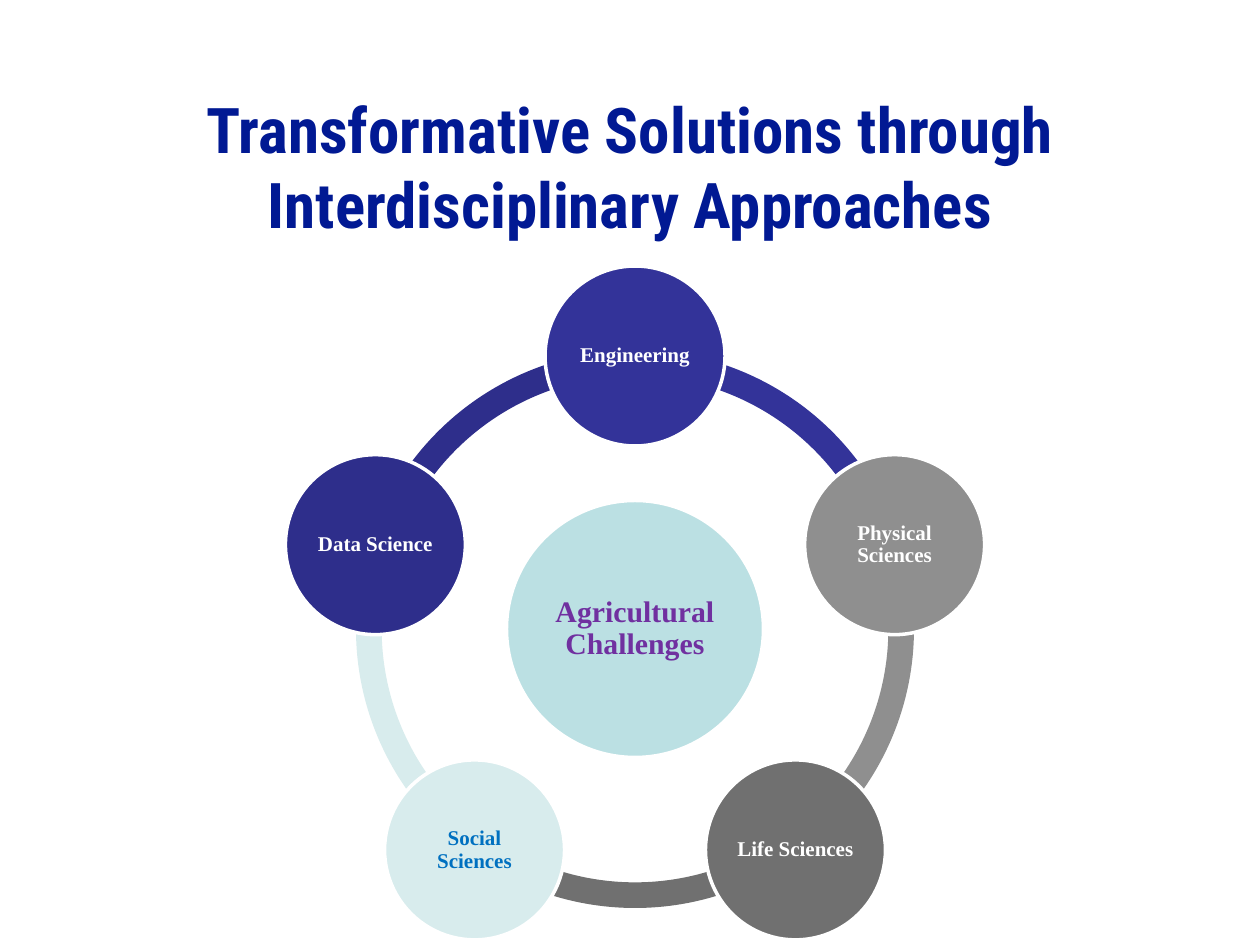
from math import cos, radians, sin

from pptx import Presentation
from pptx.dml.color import RGBColor
from pptx.enum.shapes import MSO_SHAPE
from pptx.enum.text import MSO_ANCHOR, MSO_AUTO_SIZE, PP_ALIGN
from pptx.util import Pt

# Content
TITLE = "Transformative Solutions through Interdisciplinary Approaches"
HUB = ("Agricultural Challenges", "hub", "hub_text")
NODES = [  # label, fill, text colour; clockwise from the top
    ("Engineering", "indigo", "white"),
    ("Physical Sciences", "silver", "white"),
    ("Life Sciences", "gray", "white"),
    ("Social Sciences", "mist", "blue"),
    ("Data Science", "navy", "white"),
]

THEME = {
    "colors": {
        "title": "011993", "white": "FFFFFF", "blue": "0070C0",
        "hub": "BBE0E3", "hub_text": "7030A0", "indigo": "333399",
        "silver": "8F8F8F", "gray": "707070", "mist": "D8ECED", "navy": "2E2E8B",
    },
    "sizes": {"title": 36, "hub": 17, "node": 12},
    "fonts": {"title": "Roboto Condensed", "body": "Times New Roman"},
}

# Geometry in px
PX = 914400 / 126
CENTER_X, CENTER_Y = 635, 629
ORBIT_RADIUS = 273
RING_SIZE, HUB_SIZE, NODE_SIZE = 558, 257, 180
RING_THICKNESS = 0.046  # share of the ring size
TEXT_INSET = 3
STEP = 360 / len(NODES)


def emu(px):
    return round(px * PX)


def color(name):
    return RGBColor.from_string(THEME["colors"][name])


def write(frame, text, size, font, color_name, inset=0):
    frame.word_wrap = True
    frame.auto_size = MSO_AUTO_SIZE.NONE
    frame.vertical_anchor = MSO_ANCHOR.MIDDLE
    frame.margin_left = frame.margin_right = emu(inset)
    frame.margin_top = frame.margin_bottom = emu(inset)
    paragraph = frame.paragraphs[0]
    paragraph.alignment = PP_ALIGN.CENTER
    run = paragraph.add_run()
    run.text = text
    run.font.size = Pt(THEME["sizes"][size])
    run.font.name = THEME["fonts"][font]
    run.font.bold = True
    run.font.color.rgb = color(color_name)
    return paragraph


def add_centered(slide, kind, x, y, size, fill):
    shape = slide.shapes.add_shape(
        kind, emu(x - size / 2), emu(y - size / 2), emu(size), emu(size))
    shape.shadow.inherit = False
    shape.fill.solid()
    shape.fill.fore_color.rgb = color(fill)
    shape.line.fill.background()
    return shape


def add_circle(slide, x, y, diameter, node, size):
    label, fill, text_color = node
    circle = add_centered(slide, MSO_SHAPE.OVAL, x, y, diameter, fill)
    circle.line.color.rgb = color("white")
    circle.line.width = Pt(2)
    paragraph = write(circle.text_frame, label, size, "body", text_color, TEXT_INSET)
    paragraph.line_spacing = 0.9


def add_arc(slide, start, fill):
    arc = add_centered(slide, MSO_SHAPE.BLOCK_ARC, CENTER_X, CENTER_Y, RING_SIZE, fill)
    # Angles are stored in 1/60000 degree, adjustments in 1/100000
    arc.adjustments[0] = start % 360 * 0.6
    arc.adjustments[1] = (start + STEP) % 360 * 0.6
    arc.adjustments[2] = RING_THICKNESS


def main():
    presentation = Presentation()
    presentation.slide_width, presentation.slide_height = emu(1260), emu(945)
    slide = presentation.slides.add_slide(presentation.slide_layouts[5])

    # Title
    title = slide.shapes.title
    title.left, title.top, title.width, title.height = map(emu, (63, 112, 1134, 108))
    write(title.text_frame, TITLE, "title", "title", "title")

    # Ring: each arc leads from its node to the next one
    angles = [270 + STEP * index for index in range(len(NODES))]
    for angle, (_, fill, _) in reversed(list(zip(angles, NODES))):
        add_arc(slide, angle, fill)

    # Hub and nodes
    add_circle(slide, CENTER_X, CENTER_Y, HUB_SIZE, HUB, "hub")
    for angle, node in zip(angles, NODES):
        x = CENTER_X + ORBIT_RADIUS * cos(radians(angle))
        y = CENTER_Y + ORBIT_RADIUS * sin(radians(angle))
        add_circle(slide, x, y, NODE_SIZE, node, "node")

    presentation.save("out.pptx")


if __name__ == "__main__":
    main()
